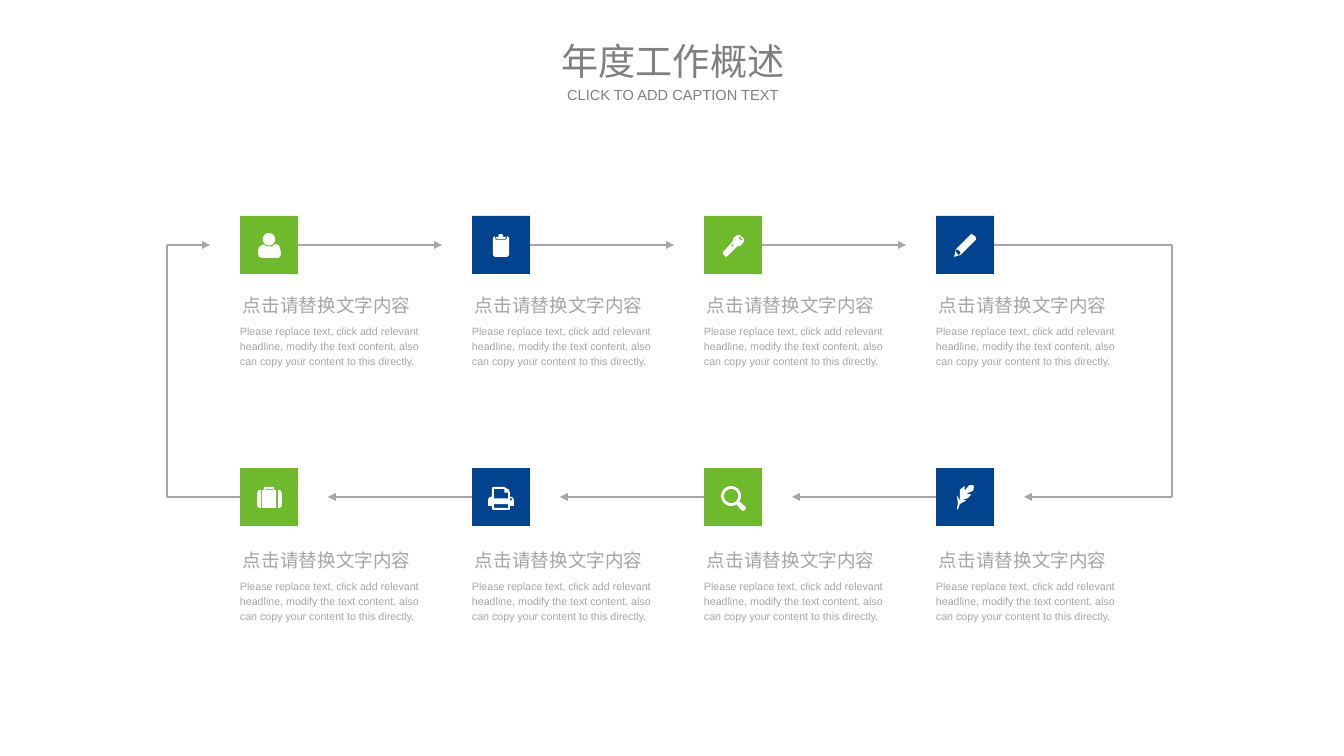
"""Build the annual work overview slide: eight steps joined in a loop."""
from math import cos, pi, sin

from lxml.etree import SubElement
from pptx import Presentation
from pptx.dml.color import RGBColor
from pptx.enum.shapes import MSO_CONNECTOR, MSO_SHAPE
from pptx.enum.text import MSO_ANCHOR, MSO_AUTO_SIZE, PP_ALIGN
from pptx.oxml.ns import qn
from pptx.util import Pt


def ring(x, y, r):
    """Return the points of a circle."""
    turns = [pi * i / 16 for i in range(32)]
    return [(x + r * cos(a), y + r * sin(a)) for a in turns]


TITLE = "年度工作概述"
CAPTION = "CLICK TO ADD CAPTION TEXT"
HEAD = "点击请替换文字内容"
BODY = ("Please replace text, click add relevant headline, modify the text "
        "content, also can copy your content to this directly.")

PERSON = [
    [ring(30.5, 24.5, 6.5)],
    [[(19, 36), (20, 33), (22, 31), (25, 30), (28, 32), (31, 32), (34, 32),
      (36, 30), (39, 30), (41, 31), (42, 34), (43, 38), (43, 41), (41, 44),
      (23, 44), (20, 43), (19, 40)]],
]
BOARD = [
    [[(37, 21), (36, 25), (25, 25), (24, 21), (22, 23), (22, 41), (24, 43),
      (37, 43), (39, 41), (39, 23)]],
    [[(35, 24), (36, 22), (33, 22), (32, 19), (28, 19), (28, 22), (25, 22),
      (26, 24)]],
]
TORCH = [
    [[(40, 22), (37, 20), (35, 20), (31, 23), (30, 27), (20, 38), (20, 40),
      (23, 43), (25, 42), (35, 32), (39, 31), (42, 27), (42, 24)],
     [(36, 21), (39, 23), (41, 26), (38, 25)],
     [(29, 32), (29, 30), (31, 30), (31, 32)]],
]
PENCIL = [
    [[(41, 21), (37, 19), (29, 27), (21, 35), (19, 43), (26, 41), (35, 32),
      (42, 25), (42, 23)],
     [(26, 40), (23, 41), (22, 39), (21, 38), (21, 36), (22, 35), (25, 37)]],
]
CASE = [
    [[(22, 23), (20, 23), (18, 26), (18, 40), (20, 42), (22, 42)]],
    [[(23, 23), (25, 23), (25, 21), (26, 20), (35, 20), (36, 21), (36, 23),
      (38, 23), (38, 42), (23, 42)],
     [(27, 22), (35, 22), (35, 23), (27, 23)]],
    [[(40, 23), (42, 23), (44, 26), (44, 40), (42, 42), (40, 42)]],
]
PRINTER = [
    [[(22, 20), (34, 20), (39, 23), (40, 26), (40, 30), (43, 31), (44, 33),
      (44, 40), (40, 40), (40, 43), (39, 44), (22, 44), (21, 43), (21, 40),
      (17, 40), (17, 33), (18, 31), (21, 30), (21, 21)],
     [(38, 32), (23, 32), (23, 22), (34, 22), (34, 26), (38, 26)],
     [(38, 42), (23, 42), (23, 38), (38, 38)],
     [(40, 34), (40, 32), (42, 32), (42, 34)]],
]
LENS = [
    [ring(28.5, 29.5, 10.5), ring(28.5, 29.5, 7.5)],
    [[(34, 38), (40, 45), (42, 45), (44, 43), (44, 41), (37, 35)]],
]
FEATHER = [
    [[(23, 44), (25, 38), (32, 34), (28, 33), (33, 32), (37, 28), (32, 27),
      (39, 24), (40, 20), (39, 18), (35, 18), (30, 24), (30, 19), (25, 23),
      (25, 34), (22, 29), (23, 37), (22, 43)]],
]
ROWS = [
    (216, 74, [PERSON, BOARD, TORCH, PENCIL]),
    (468, 77, [CASE, PRINTER, LENS, FEATHER]),
]

GREEN = RGBColor(0x6E, 0xB9, 0x2C)
BLUE = RGBColor(0x01, 0x43, 0x8E)
WHITE = RGBColor(0xFF, 0xFF, 0xFF)
SILVER = RGBColor(0xA6, 0xA6, 0xA6)
GREY = RGBColor(0x80, 0x80, 0x80)

PX = 9565
GRID = 61
FINE = 10
LEFT, PITCH, TILE, GAP = 240, 232, 58, 30
WEST, EAST = 167, 1172

deck = Presentation()
deck.slide_width, deck.slide_height = 1344 * PX, 756 * PX
slide = deck.slides.add_slide(deck.slide_layouts[6])
shapes = slide.shapes


def paint(shape, color):
    """Give a shape a plain fill."""
    shape.shadow.inherit = False
    shape.fill.solid()
    shape.fill.fore_color.rgb = color
    shape.line.fill.background()


def draw(icon, x, y):
    """Draw a white icon on the tile at x, y."""
    for part in icon:
        pen = None
        for loop in part:
            first, *rest = [(a * FINE, b * FINE) for a, b in loop]
            if pen is None:
                pen = shapes.build_freeform(*first, TILE * PX / GRID / FINE)
            else:
                pen.move_to(*first)
            pen.add_line_segments(rest, close=True)
        paint(pen.convert_to_shape(x * PX, y * PX), WHITE)


def write(text, box, size, color, middle=False):
    """Add a text box."""
    shape = shapes.add_textbox(*[n * PX for n in box])
    frame = shape.text_frame
    frame.word_wrap = True
    frame.auto_size = MSO_AUTO_SIZE.SHAPE_TO_FIT_TEXT
    frame.margin_left = frame.margin_right = 0
    frame.margin_top = frame.margin_bottom = 0
    frame.text = text
    para = frame.paragraphs[0]
    if middle:
        frame.vertical_anchor = MSO_ANCHOR.MIDDLE
        para.alignment = PP_ALIGN.CENTER
    else:
        para.line_spacing = 1.2
    font = para.runs[0].font
    font.name, font.size = "Arial", Pt(size)
    font.color.rgb = color


def link(start, end, arrow=True, tile=None, side=3):
    """Add a line, joined at its start to a side of a tile if given."""
    ends = [n * PX for n in start + end]
    line = shapes.add_connector(MSO_CONNECTOR.STRAIGHT, *ends)
    if tile is not None:
        line.begin_connect(tile, side)
    line.line.color.rgb = SILVER
    line.line.width = Pt(1)
    if arrow:
        SubElement(line.line._get_or_add_ln(), qn("a:tailEnd"), type="triangle")
    SubElement(line._element.spPr, qn("a:effectLst"))


write(TITLE, (552, 37, 242, 47), 28, GREY, True)
write(CAPTION, (552, 86, 242, 18), 11, GREY, True)

tiles = []
for top, drop, icons in ROWS:
    for col, icon in enumerate(icons):
        x = LEFT + col * PITCH
        tile = shapes.add_shape(MSO_SHAPE.RECTANGLE, x * PX, top * PX,
                                TILE * PX, TILE * PX)
        paint(tile, BLUE if col % 2 else GREEN)
        tiles.append(tile)
        draw(icon, x, top)
        write(HEAD, (x + 3, top + drop, 238, 25), 14, SILVER)
        write(BODY, (x, top + drop + 32, 193, 45), 8, SILVER)

high, low = [top + TILE // 2 for top, _, _ in ROWS]
upper, lower = tiles[:4], tiles[4:]
for col in range(3):
    x = LEFT + col * PITCH
    link((x + TILE, high), (x + PITCH - GAP, high), tile=upper[col])
    link((x + PITCH, low), (x + TILE + GAP, low), tile=lower[col + 1], side=1)

last = LEFT + 3 * PITCH + TILE
link((last, high), (EAST, high), False, upper[3])
link((EAST, high), (EAST, low), False)
link((EAST, low), (last + GAP, low))
link((LEFT, low), (WEST, low), False, lower[0], 1)
link((WEST, low), (WEST, high), False)
link((WEST, high), (LEFT - GAP, high))

deck.save("out.pptx")
